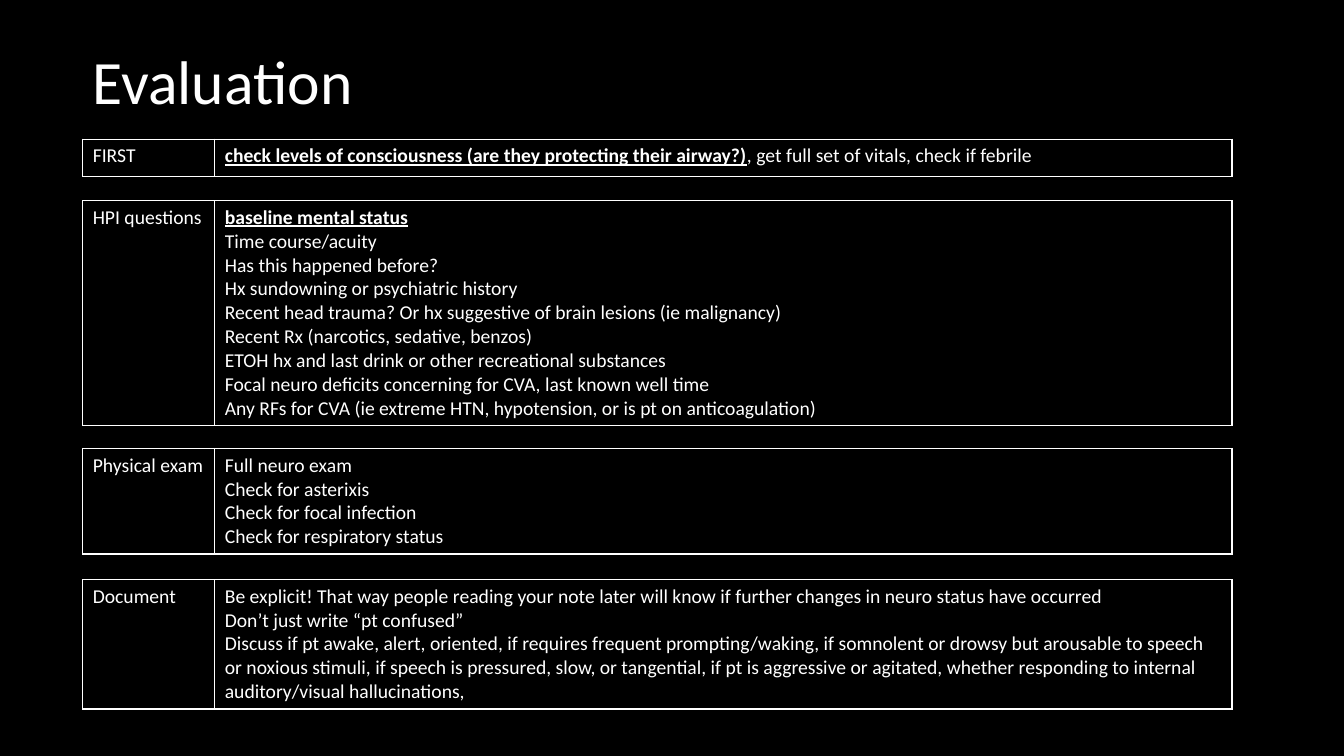
import pptx
import pptx.dml.color
import pptx.enum.text
import pptx.oxml
import pptx.oxml.ns
import pptx.util
from pptx.util import Inches, Pt

BLACK = pptx.dml.color.RGBColor(0x00, 0x00, 0x00)
WHITE = pptx.dml.color.RGBColor(0xFF, 0xFF, 0xFF)
FONT = "Calibri"

TITLE = "Evaluation"
# Each step: label, top, height, emphasised opening words, lines of text
STEPS = [
    ("FIRST", 1.38, 0.37,
     "check levels of consciousness (are they protecting their airway?)",
     [", get full set of vitals, check if febrile"]),
    ("HPI questions", 1.99, 2.2, "baseline mental status", [
        "",
        "Time course/acuity",
        "Has this happened before?",
        "Hx sundowning or psychiatric history",
        "Recent head trauma? Or hx suggestive of brain lesions (ie malignancy)",
        "Recent Rx (narcotics, sedative, benzos)",
        "ETOH hx and last drink or other recreational substances",
        "Focal neuro deficits concerning for CVA, last known well time",
        "Any RFs for CVA (ie extreme HTN, hypotension, or is pt on anticoagulation)",
    ]),
    ("Physical exam", 4.45, 1.03, "", [
        "Full neuro exam",
        "Check for asterixis",
        "Check for focal infection",
        "Check for respiratory status",
    ]),
    ("Document", 5.75, 1.27, "", [
        "Be explicit! That way people reading your note later will know if "
        "further changes in neuro status have occurred",
        "Don’t just write “pt confused”",
        "Discuss if pt awake, alert, oriented, if requires frequent "
        "prompting/waking, if somnolent or drowsy but arousable to speech or "
        "noxious stimuli, if speech is pressured, slow, or tangential, if pt is "
        "aggressive or agitated, whether responding to internal "
        "auditory/visual hallucinations,",
    ]),
]
LEFT = 0.82
COLUMN_WIDTHS = (1.31, 10.09)


def set_font(paragraph, size):
    paragraph.font.name = FONT
    paragraph.font.size = Pt(size)
    paragraph.font.color.rgb = WHITE


def outline(cell):
    """Draw a 1 pt white border on all four sides of an unfilled cell."""
    properties = cell._tc.get_or_add_tcPr()
    for side in ("lnL", "lnR", "lnT", "lnB"):
        properties.append(pptx.oxml.parse_xml(
            f'<a:{side} {pptx.oxml.ns.nsdecls("a")} w="{Pt(1)}">'
            f'<a:solidFill><a:srgbClr val="{WHITE}"/></a:solidFill></a:{side}>'))
    cell.fill.background()


def write_cell(cell, emphasis, lines):
    frame = cell.text_frame
    for number, line in enumerate(lines):
        paragraph = frame.add_paragraph() if number else frame.paragraphs[0]
        set_font(paragraph, 14)
        if emphasis and number == 0:
            opening = paragraph.add_run()
            opening.text = emphasis
            opening.font.bold = opening.font.underline = True
        if line:
            paragraph.add_run().text = line
    outline(cell)


def add_step(slide, label, top, height, emphasis, lines):
    table = slide.shapes.add_table(
        1, 2, Inches(LEFT), Inches(top),
        Inches(sum(COLUMN_WIDTHS)), Inches(height)).table
    table.first_row = table.horz_banding = False
    for column, width in zip(table.columns, COLUMN_WIDTHS):
        column.width = Inches(width)
    write_cell(table.cell(0, 0), "", [label])
    write_cell(table.cell(0, 1), emphasis, lines)


def main():
    deck = pptx.Presentation()
    deck.slide_width, deck.slide_height = Inches(13.33), Inches(7.5)
    slide = deck.slides.add_slide(deck.slide_layouts[5])
    slide.background.fill.solid()
    slide.background.fill.fore_color.rgb = BLACK

    title = slide.shapes.title
    title.left, title.top = Inches(LEFT), Inches(0.11)
    title.width, title.height = Inches(11.5), Inches(1.45)
    title.text_frame.text = TITLE
    title.text_frame.vertical_anchor = pptx.enum.text.MSO_ANCHOR.MIDDLE
    heading = title.text_frame.paragraphs[0]
    heading.alignment = pptx.enum.text.PP_ALIGN.LEFT
    heading.line_spacing = 0.9
    set_font(heading, 44)

    for step in STEPS:
        add_step(slide, *step)
    deck.save("out.pptx")


if __name__ == "__main__":
    main()
